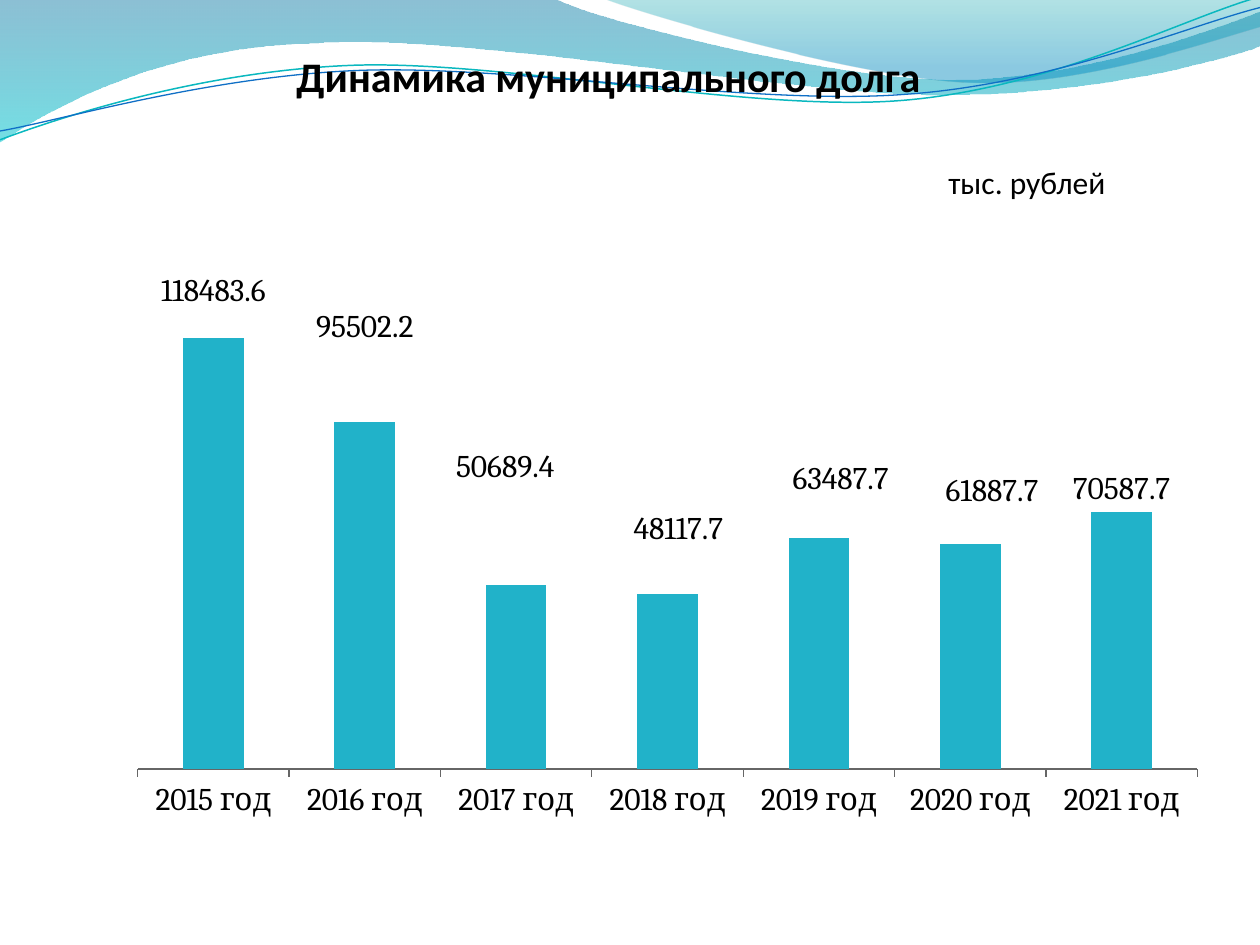
import pptx
import pptx.chart.data
import pptx.dml.color
import pptx.enum.chart
import pptx.enum.text
import pptx.oxml
import pptx.oxml.ns
import pptx.util

WIDE, HIGH = 10, 7.5
DEBT = {2015: 118483.6, 2016: 95502.2, 2017: 50689.4, 2018: 48117.7,
        2019: 63487.7, 2020: 61887.7, 2021: 70587.7}
SHIFTS = [(0, -0.04), (0, -0.12), (-0.01, -0.16), (0.01, -0.07), (0.02, -0.06), (0.02, -0.05)]
BANDS = [
    ([(0, 0), (4.4, -0.01),
      (4.76, 0.17, 6.64, 0.63, 7.58, 0.63), (8.53, 0.63, 9.58, 0.26, 10, 0.09), (10.01, 0.36),
      (9.83, 0.44, 8.7, 0.76, 7.46, 0.75), (6.22, 0.75, 3.82, 0.28, 2.57, 0.34),
      (1.29, 0.36, 0.46, 0.83, -0.01, 1.13)],
     [(0, "0074A1", 45), (100, "00C6CF", 55)]),
    ([(4.79, -0.01), (5.09, 0.11, 6.82, 0.62, 7.69, 0.65),
      (8.56, 0.69, 9.61, 0.32, 10, 0.21), (10, 0)],
     [(0, "00A1A9", 30), (80, "008BBF", 45)]),
]
WAVES = [
    ([(0, 1.11), (0.48, 0.93, 1.58, 0.57, 2.77, 0.52),
      (3.95, 0.47, 5.93, 0.89, 7.13, 0.8), (8.33, 0.71, 9.38, 0.15, 9.98, -0.02)],
     "0AB8BF", 0.85),
    ([(0, 1.04), (0.47, 0.96, 1.64, 0.61, 2.83, 0.56),
      (4.03, 0.51, 5.97, 0.84, 7.17, 0.75), (8.36, 0.67, 9.41, 0.21, 10, 0.06)],
     "0F6FC6", 0.75),
]


def paint(code):
    """Turn a hex string into a colour."""
    return pptx.dml.color.RGBColor.from_string(code)


def apply(target, values):
    """Set each attribute of the target from a dict."""
    for name, value in values.items():
        setattr(target, name, value)


def frame(left, top, width, height):
    """Turn percent shares of the slide into lengths."""
    return [pptx.util.Inches(share * size / 100)
            for share, size in zip((left, top, width, height), (WIDE, HIGH) * 2)]


def bend(shape, steps):
    """Turn the straight segments of a freeform into its cubic curves."""
    lines = shape.element.spPr.findall(".//" + pptx.oxml.ns.qn("a:lnTo"))
    for line, step in zip(lines, steps[1:]):
        if len(step) == 6:
            spots = [pptx.util.Inches(size) for size in step]
            nodes = "".join(f'<a:pt x="{x - shape.left}" y="{y - shape.top}"/>'
                            for x, y in zip(spots[::2], spots[1::2]))
            line.getparent().replace(line, pptx.oxml.parse_xml(
                f'<a:cubicBezTo {pptx.oxml.ns.nsdecls("a")}>{nodes}</a:cubicBezTo>'))


def draw(slide, steps, close):
    """Draw a curved freeform without a shadow."""
    ends = [tuple(pptx.util.Inches(size) for size in step[-2:]) for step in steps]
    pen = slide.shapes.build_freeform(*ends[0])
    pen.add_line_segments(ends[1:], close=close)
    shape = pen.convert_to_shape()
    shape.shadow.inherit = False
    bend(shape, steps)
    return shape


def band(slide, steps, stops):
    """Draw a closed band with a see-through gradient."""
    shape = draw(slide, steps, True)
    shape.line.fill.background()
    shape.fill.gradient()
    shape.fill.gradient_angle = 270
    nodes = shape.element.spPr.findall(".//" + pptx.oxml.ns.qn("a:gs"))
    for stop, node, (place, code, alpha) in zip(shape.fill.gradient_stops, nodes, stops):
        stop.color.rgb = paint(code)
        node.set("pos", str(place * 1000))
        tag = pptx.oxml.parse_xml(
            f'<a:alpha {pptx.oxml.ns.nsdecls("a")} val="{alpha * 1000}"/>')
        node[0].append(tag)


def wave(slide, steps, code, width):
    """Draw an open curved line."""
    shape = draw(slide, steps, False)
    shape.fill.background()
    shape.line.color.rgb = paint(code)
    shape.line.width = pptx.util.Pt(width)


def label(slide, text, place, size, bold):
    """Write one centred line of text."""
    box = slide.shapes.add_textbox(*frame(*place)).text_frame
    apply(box, dict(word_wrap=True, margin_left=0, margin_right=0, margin_top=0,
                    margin_bottom=0, vertical_anchor=pptx.enum.text.MSO_ANCHOR.MIDDLE))
    line = box.paragraphs[0]
    line.alignment = pptx.enum.text.PP_ALIGN.CENTER
    run = line.add_run()
    run.text = text
    apply(run.font, dict(name="Calibri", size=pptx.util.Pt(size), bold=bold))
    run.font.color.rgb = paint("000000")


def layout(parent, index, **values):
    """Give a chart part a manual layout."""
    for old in parent.findall(pptx.oxml.ns.qn("c:layout")):
        parent.remove(old)
    tags = "".join(f'<c:{name} val="{value}"/>' for name, value in values.items())
    parent.insert(index, pptx.oxml.parse_xml(
        f'<c:layout {pptx.oxml.ns.nsdecls("c")}><c:manualLayout>{tags}'
        '</c:manualLayout></c:layout>'))


def unlead(tag):
    """Switch off the leader lines of the data labels."""
    for old in tag.findall(pptx.oxml.ns.qn("c:showLeaderLines")):
        old.set("val", "0")
    tag.append(pptx.oxml.parse_xml(
        f'<c:extLst {pptx.oxml.ns.nsdecls("c")}>'
        '<c:ext uri="{CE6537A1-D6FC-4f65-9D91-7224C49458BB}" '
        'xmlns:c15="http://schemas.microsoft.com/office/drawing/2012/chart">'
        '<c15:showLeaderLines val="0"/></c:ext></c:extLst>'))


def bars(slide, place):
    """Add the column chart of the debt by year."""
    kinds = pptx.enum.chart
    data = pptx.chart.data.CategoryChartData(number_format="General")
    data.categories = [f"{year} год" for year in DEBT]
    data.add_series("Series 1", DEBT.values())
    chart = slide.shapes.add_chart(
        kinds.XL_CHART_TYPE.COLUMN_CLUSTERED, *frame(*place), data).chart
    apply(chart, dict(has_legend=False, has_title=False))
    apply(chart.font, dict(name="Cambria", size=pptx.util.Pt(18)))
    chart.font.color.rgb = paint("000000")
    apply(chart.value_axis, dict(visible=False, has_major_gridlines=False,
                                 minimum_scale=0, maximum_scale=140000))
    axis = chart.category_axis
    apply(axis, dict(has_major_gridlines=False, major_tick_mark=kinds.XL_TICK_MARK.OUTSIDE))
    axis.format.line.color.rgb = paint("666666")
    axis.format.line.width = pptx.util.Pt(0.75)
    plot = chart.plots[0]
    apply(plot, dict(gap_width=150, vary_by_categories=False))
    row = plot.series[0]
    row.format.fill.solid()
    row.format.fill.fore_color.rgb = paint("21B2C9")
    spot = kinds.XL_LABEL_POSITION.OUTSIDE_END
    apply(row.data_labels, dict(show_value=True, position=spot))
    for index in range(len(SHIFTS)):
        row.points[index].data_label.position = spot
    group = row.data_labels._element
    for tag, (x, y) in zip(group.findall(pptx.oxml.ns.qn("c:dLbl")), SHIFTS):
        layout(tag, 1, x=x, y=y)
    unlead(group)
    area = chart._chartSpace.find(".//" + pptx.oxml.ns.qn("c:plotArea"))
    layout(area, 0, layoutTarget="inner", xMode="edge", yMode="edge",
           x=0.02, y=0.03, w=0.97, h=0.86)


def main():
    """Build the slide and save it."""
    deck = pptx.Presentation()
    apply(deck, dict(slide_width=pptx.util.Inches(WIDE), slide_height=pptx.util.Inches(HIGH)))
    slide = deck.slides.add_slide(deck.slide_layouts[6])
    for item in BANDS:
        band(slide, *item)
    for item in WAVES:
        wave(slide, *item)
    label(slide, "Динамика муниципального долга", (3.3, 5.5, 90, 5), 24, True)
    label(slide, "тыс. рублей", (71, 16.7, 21, 5), 18, False)
    bars(slide, (9.2, 25.6, 86.7, 62.7))
    deck.save("out.pptx")


if __name__ == "__main__":
    main()
